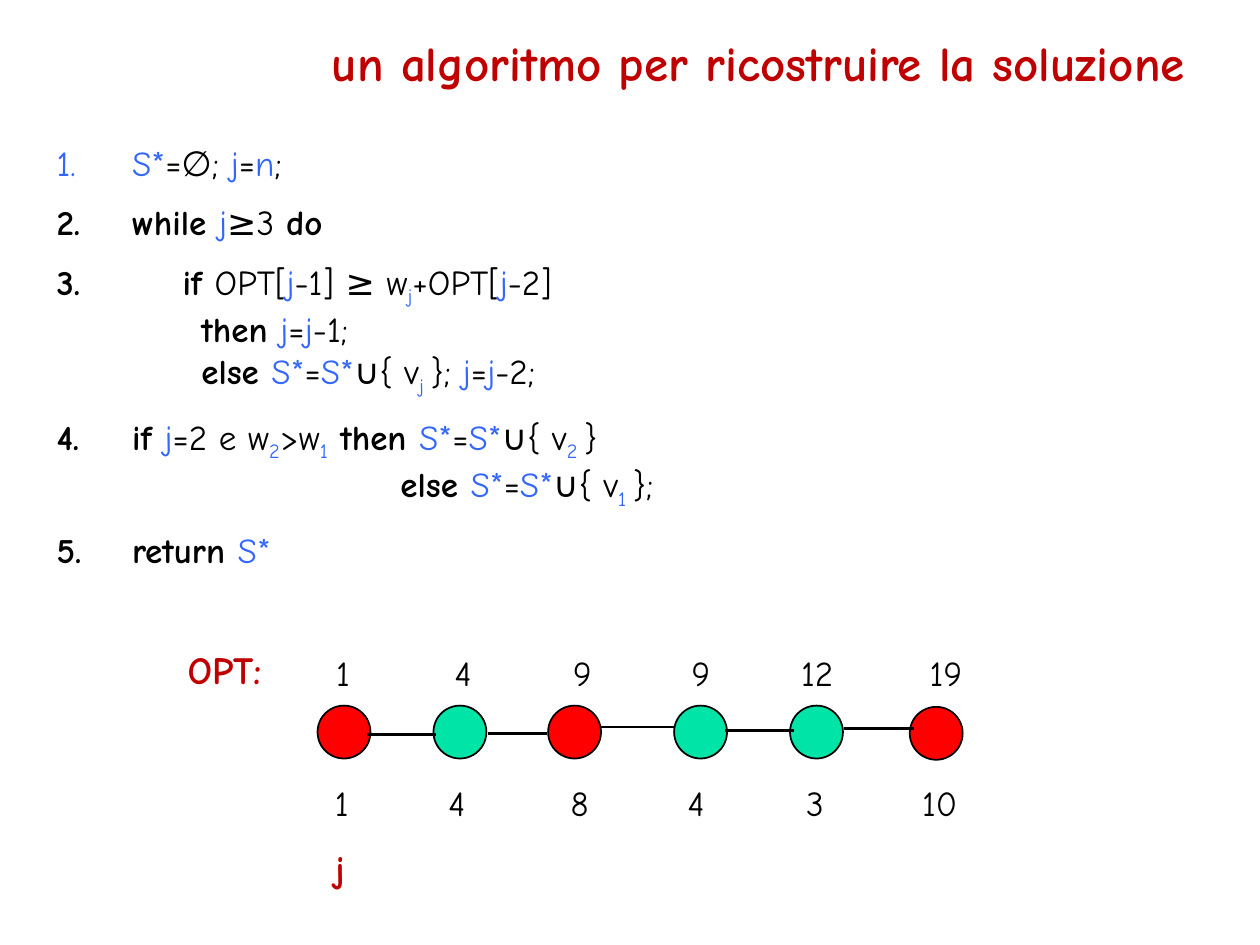
import pptx
import pptx.dml.color
import pptx.enum.shapes
import pptx.enum.text
import pptx.oxml.ns
import pptx.util
from lxml import etree

Inches = pptx.util.Inches
Pt = pptx.util.Pt
RGBColor = pptx.dml.color.RGBColor

BLACK = RGBColor(0x00, 0x00, 0x00)
WHITE = RGBColor(0xFF, 0xFF, 0xFF)
CRIMSON = RGBColor(0xC0, 0x00, 0x00)
BLUE = RGBColor(0x33, 0x66, 0xFF)
RED = RGBColor(0xFF, 0x00, 0x00)
GREEN = RGBColor(0x00, 0xE4, 0xA8)

PLAIN = {"name": "Comic Neue", "size": Pt(20), "bold": False, "color": BLACK}
KEYWORD = {**PLAIN, "bold": True}
VARIABLE = {**PLAIN, "color": BLUE}
SUBSCRIPT = {**VARIABLE, "baseline": "-25000"}
LABEL = {**KEYWORD, "size": Pt(22), "color": CRIMSON}
TITLE = {**LABEL, "size": Pt(28)}

S_STAR = ("S*", VARIABLE)
J = ("j", VARIABLE)
EQUALS = ("=", PLAIN)
UNION = [S_STAR, EQUALS, S_STAR, ("∪{ v", PLAIN)]

ALGORITHM = [
    (1, 0.6, [S_STAR, ("=∅; ", PLAIN), J, EQUALS, ("n", VARIABLE), (";", PLAIN)]),
    (2, 0.6, [("while ", KEYWORD), J, ("≥3 ", PLAIN), ("do", KEYWORD)]),
    (3, 1.0, [("if ", KEYWORD), ("OPT[", PLAIN), J, ("-1] ≥ w", PLAIN), ("j", SUBSCRIPT),
              ("+OPT[", PLAIN), J, ("-2]", PLAIN)]),
    (None, 1.15, [("then ", KEYWORD), J, EQUALS, J, ("-1;", PLAIN)]),
    (None, 1.15, [("else ", KEYWORD), *UNION, ("j ", SUBSCRIPT), ("}; ", PLAIN),
                  J, EQUALS, J, ("-2;", PLAIN)]),
    (4, 0.6, [("if ", KEYWORD), J, ("=2 e w", PLAIN), ("2", SUBSCRIPT), (">w", PLAIN),
              ("1", SUBSCRIPT), (" then ", KEYWORD), *UNION, ("2 ", SUBSCRIPT), ("}", PLAIN)]),
    (None, 2.73, [("else ", KEYWORD), *UNION, ("1 ", SUBSCRIPT), ("};", PLAIN)]),
    (5, 0.6, [("return ", KEYWORD), S_STAR]),
]

NODES = [
    (1.13, 0.52, RED, "1", 1.18, "1", 1.17),
    (2.05, 0.52, GREEN, "4", 2.12, "4", 2.07),
    (2.96, 0.52, RED, "9", 3.06, "8", 3.04),
    (3.96, 0.52, GREEN, "9", 4.0, "4", 3.97),
    (4.88, 0.52, GREEN, "12", 4.87, "3", 4.91),
    (5.83, 0.53, RED, "19", 5.89, "10", 5.83),
]
LINKS = [(1.52, 2.07, 0.75), (2.48, 2.95, 0.74), (3.38, 3.96, 0.69),
         (4.36, 4.91, 0.72), (5.31, 5.86, 0.7)]


def add_run(paragraph, text, style):
    run = paragraph.add_run()
    run.text = text
    for attribute, value in style.items():
        if attribute == "color":
            run.font.color.rgb = value
        elif attribute == "baseline":
            run._r.get_or_add_rPr().set("baseline", value)
        else:
            setattr(run.font, attribute, value)


def add_label(slide, left, top, width, height, text, style):
    shape = slide.shapes.add_textbox(left, top, width, height)
    shape.text_frame.word_wrap = True
    paragraph = shape.text_frame.paragraphs[0]
    add_run(paragraph, text, style)
    return paragraph


def set_numbering(paragraph, number, margin):
    properties = paragraph._p.get_or_add_pPr()
    properties.set("marL", str(Inches(margin)))
    properties.set("indent", str(-Inches(margin) if number else 0))
    tag = "a:buAutoNum" if number else "a:buNone"
    bullet = etree.SubElement(properties, pptx.oxml.ns.qn(tag))
    if number:
        bullet.set("type", "arabicPeriod")
        bullet.set("startAt", str(number))


def add_title(slide, left, top, width, height):
    paragraph = add_label(slide, left, top, width, height,
                          "un algoritmo per ricostruire la soluzione", TITLE)
    paragraph.alignment = pptx.enum.text.PP_ALIGN.RIGHT


def add_algorithm(slide, left, top, width, height):
    shape = slide.shapes.add_shape(pptx.enum.shapes.MSO_SHAPE.RECTANGLE, left, top, width, height)
    shape.shadow.inherit = False
    shape.fill.solid()
    shape.fill.fore_color.rgb = WHITE
    shape.line.fill.background()
    frame = shape.text_frame
    frame.word_wrap = True
    frame.vertical_anchor = pptx.enum.text.MSO_ANCHOR.TOP
    for index, (number, margin, runs) in enumerate(ALGORITHM):
        paragraph = frame.add_paragraph() if index else frame.paragraphs[0]
        paragraph.alignment = pptx.enum.text.PP_ALIGN.LEFT
        paragraph.space_before = Pt(10 if number else 0)
        set_numbering(paragraph, number, margin)
        for text, style in runs:
            add_run(paragraph, text, style)


def add_node(slide, left, top, color):
    shape = slide.shapes.add_shape(pptx.enum.shapes.MSO_SHAPE.OVAL, left, top,
                                   Inches(0.42), Inches(0.42))
    shape.shadow.inherit = False
    shape.fill.solid()
    shape.fill.fore_color.rgb = color
    shape.line.color.rgb = BLACK
    shape.line.width = Pt(1)


def add_link(slide, start, end, level):
    connector = slide.shapes.add_connector(pptx.enum.shapes.MSO_CONNECTOR.STRAIGHT,
                                           start, level, end, level)
    connector.line.color.rgb = BLACK
    connector.line.width = Pt(1.5)
    etree.SubElement(connector._element.spPr, pptx.oxml.ns.qn("a:effectLst"))


def add_path_graph(slide, left, top, width, height):
    label_height = Inches(0.47)
    add_label(slide, left, top, Inches(1.1), label_height, "OPT:", LABEL)
    add_label(slide, left + Inches(1.17), top + height - label_height,
              Inches(0.37), label_height, "j", LABEL)
    for x, y, color, optimum, optimum_x, weight, weight_x in NODES:
        add_node(slide, left + Inches(x), top + Inches(y), color)
        for text, text_x, text_y in ((optimum, optimum_x, 0.04), (weight, weight_x, 1.07)):
            add_label(slide, left + Inches(text_x), top + Inches(text_y),
                      Inches(0.31 * len(text)), Inches(0.44), text, PLAIN)
    for start, end, level in LINKS:
        add_link(slide, left + Inches(start), left + Inches(end), top + Inches(level))


def main():
    presentation = pptx.Presentation()
    presentation.slide_width = Inches(10)
    presentation.slide_height = Inches(7.5)
    slide = presentation.slides.add_slide(presentation.slide_layouts[6])
    add_title(slide, Inches(0.5), Inches(0.21), Inches(9), Inches(1))
    add_algorithm(slide, Inches(0.35), Inches(1.07), Inches(6.22), Inches(3.47))
    add_path_graph(slide, Inches(1.39), Inches(5.08), Inches(6.52), Inches(2.05))
    presentation.save("out.pptx")


if __name__ == "__main__":
    main()
